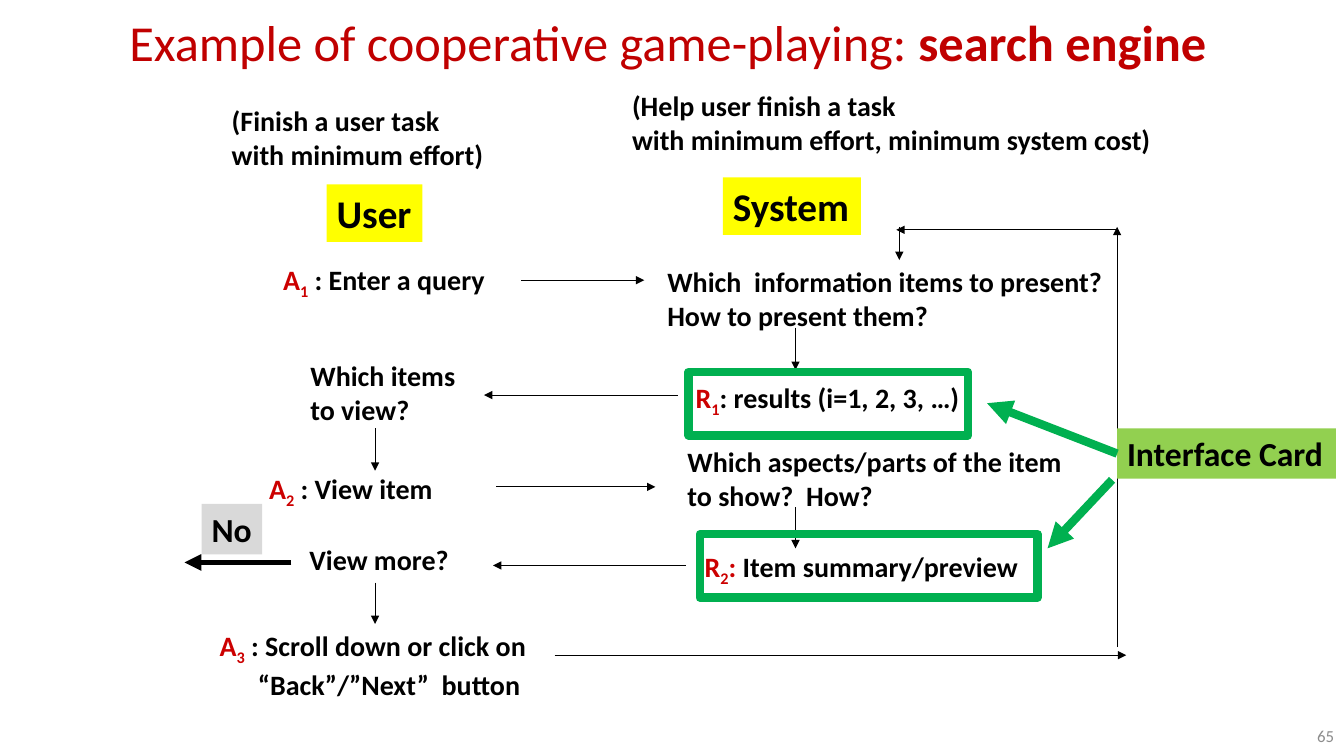
import pptx
import pptx.dml.color
import pptx.enum.shapes
import pptx.enum.text
import pptx.oxml.ns
import pptx.util
from lxml import etree

Inches = pptx.util.Inches
Pt = pptx.util.Pt
Color = pptx.dml.color.RGBColor.from_string
Align = pptx.enum.text.PP_ALIGN
Anchor = pptx.enum.text.MSO_ANCHOR

THEME = {
    "font": "Calibri",
    "title": "C00000", "ink": "000000", "accent": "CC0000", "number": "8C8C8C",
    "role": "FFFF00", "answer": "D9D9D9", "card": "92D050", "frame": "00B050",
    "title_size": 36, "role_size": 28, "label_size": 24, "body_size": 20, "number_size": 12,
    "thin": 0.75, "exit": 4, "thick": 6,
}


def add_text(target, lines, size="body_size", align=Align.LEFT, anchor=Anchor.TOP, wrap=False):
    frame = target.text_frame
    frame_format = {"word_wrap": wrap, "vertical_anchor": anchor}
    for name, value in frame_format.items():
        setattr(frame, name, value)
    for index, line in enumerate(lines):
        paragraph = frame.paragraphs[0] if index == 0 else frame.add_paragraph()
        paragraph.alignment = align
        for text, color, bold, subscript in line:
            run = paragraph.add_run()
            run.text = text
            font_format = {"name": THEME["font"], "size": Pt(THEME[size]), "bold": bold}
            for name, value in font_format.items():
                setattr(run.font, name, value)
            run.font.color.rgb = Color(THEME[color])
            if subscript:
                run.font._element.set("baseline", "-25000")


def add_arrow(start, end, color="ink", width="thin"):
    arrow = slide.shapes.add_connector(
        pptx.enum.shapes.MSO_CONNECTOR.STRAIGHT, *map(Inches, start + end))
    arrow.line.color.rgb = Color(THEME[color])
    arrow.line.width = Pt(THEME[width])
    etree.SubElement(arrow.line._get_or_add_ln(), pptx.oxml.ns.qn("a:tailEnd"), type="triangle")
    etree.SubElement(arrow._element.spPr, pptx.oxml.ns.qn("a:effectLst"))
    return arrow


presentation = pptx.Presentation()
presentation.slide_width = Inches(13.33)
presentation.slide_height = Inches(7.5)
slide = presentation.slides.add_slide(presentation.slide_layouts[5])

title = slide.shapes.title
title_place = {"left": 0, "top": -0.17, "width": 13.25, "height": 1.17}
for name, value in title_place.items():
    setattr(title, name, Inches(value))
add_text(title, [[("Example of cooperative game-playing: ", "title", False, False),
                  ("search engine", "title", True, False)]],
         "title_size", Align.CENTER, Anchor.MIDDLE, True)

plain_texts = [
    ((2.2, 0.98, 2.72, 0.77), ["(Finish a user task", "with minimum effort)"]),
    ((6.17, 0.83, 5.39, 0.77),
     ["(Help user finish a task", "with minimum effort, minimum system cost)"]),
    ((6.52, 2.58, 4.55, 0.77), ["Which  information items to present?", "How to present them?"]),
    ((2.98, 3.51, 1.71, 0.77), ["Which items", "to view?"]),
    ((6.72, 4.36, 3.94, 0.77), ["Which aspects/parts of the item", "to show?  How?"]),
    ((2.97, 5.33, 1.6, 0.44), ["View more?"]),
]
for place, lines in plain_texts:
    box = slide.shapes.add_textbox(*map(Inches, place))
    add_text(box, [[(line, "ink", True, False)] for line in lines])

steps = [
    ((2.71, 2.56, 2.3, 0.44), "A", "1", "", [" : Enter a query"]),
    ((6.8, 3.73, 2.85, 0.44), "R", "1", "", [": results (i=1, 2, 3, …)"]),
    ((2.57, 4.63, 1.86, 0.44), "A", "2", "", [" : View item"]),
    ((6.89, 5.4, 3.35, 0.44), "R", "2", ":", [" Item summary/preview"]),
    ((2.08, 6.19, 3.28, 0.77), "A", "3", "",
     [" : Scroll down or click on", "“Back”/”Next”  button"]),
]
for place, letter, number, mark, lines in steps:
    box = slide.shapes.add_textbox(*map(Inches, place))
    rows = [[(line, "ink", True, False)] for line in lines]
    rows[0][:0] = [(letter, "accent", True, False), (number, "accent", True, True)]
    if mark:
        rows[0].insert(2, (mark, "accent", True, False))
    add_text(box, rows)
    for paragraph in box.text_frame.paragraphs[1:]:
        paragraph._p.get_or_add_pPr().set("marL", str(Inches(0.38)))

flow = [
    ((5.17, 2.78), (6.39, 2.78)),
    ((6.72, 3.92), (4.8, 3.92)),
    ((4.92, 4.83), (6.5, 4.83)),
    ((6.8, 5.61), (4.89, 5.61)),
    ((7.89, 3.25), (7.89, 3.67)),
    ((7.89, 5.03), (7.89, 5.44)),
    ((3.72, 4.25), (3.72, 4.67)),
    ((3.72, 5.78), (3.72, 6.19)),
    ((5.5, 6.5), (11.17, 6.5)),
    ((11.08, 6.42), (11.08, 2.25)),
    ((11.08, 2.28), (8.89, 2.28)),
    ((8.92, 2.25), (8.92, 2.58)),
]
for start, end in flow:
    add_arrow(start, end)
add_arrow((2.89, 5.58), (1.83, 5.58), width="exit")

for place in [(6.83, 3.69, 2.77, 0.63), (6.94, 5.3, 3.35, 0.63)]:
    result_frame = slide.shapes.add_shape(
        pptx.enum.shapes.MSO_SHAPE.RECTANGLE, *map(Inches, place))
    result_frame.shadow.inherit = False
    result_frame.fill.background()
    result_frame.line.color.rgb = Color(THEME["frame"])
    result_frame.line.width = Pt(THEME["thick"])

labels = [
    ("User", (3.24, 1.83, 0.95, 0.57), "role", "role_size"),
    ("System", (7.17, 1.76, 1.37, 0.57), "role", "role_size"),
    ("No", (2, 5, 0.6, 0.5), "answer", "label_size"),
    ("Interface Card", (11.08, 4.25, 2.17, 0.5), "card", "label_size"),
]
for text, place, fill, size in labels:
    label = slide.shapes.add_shape(pptx.enum.shapes.MSO_SHAPE.RECTANGLE, *map(Inches, place))
    label.shadow.inherit = False
    label.fill.solid()
    label.fill.fore_color.rgb = Color(THEME[fill])
    label.line.fill.background()
    add_text(label, [[(text, "ink", True, False)]], size)

interface_card = label
card_arrow = add_arrow((11.08, 4.5), (9.79, 4), "frame", "thick")
card_arrow.begin_connect(interface_card, 1)
add_arrow((11.03, 4.76), (10.39, 5.44), "frame", "thick")

slide_number = slide.shapes.add_textbox(*map(Inches, (10.22, 7.1, 3.11, 0.4)))
add_text(slide_number, [[("65", "number", False, False)]],
         "number_size", Align.RIGHT, Anchor.MIDDLE, True)

presentation.save("out.pptx")
